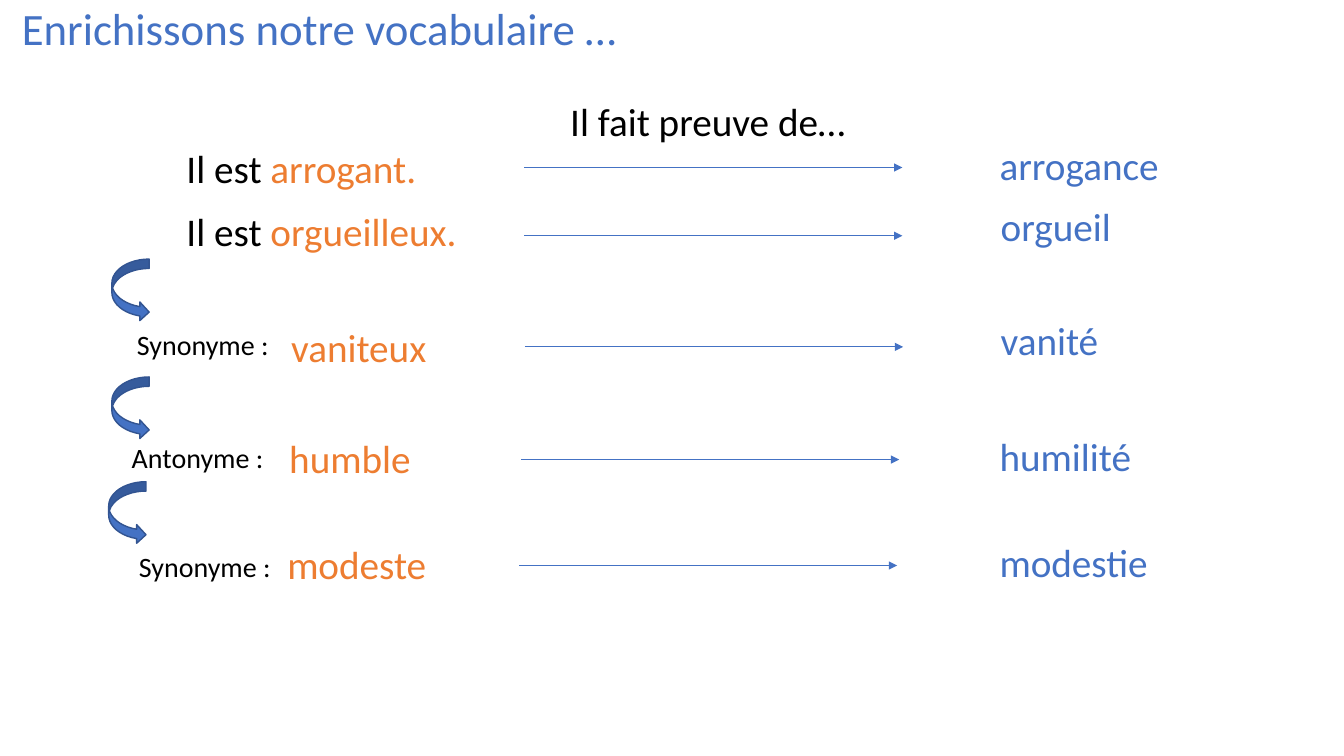
from lxml import etree
from pptx import Presentation
from pptx import util as u
from pptx.dml.color import RGBColor
from pptx.enum import shapes, text
from pptx.oxml import ns

BLUE, ORANGE, BLACK, EDGE = "4472C4", "ED7D31", "000000", "325491"
ROWS = [
    (3.43, "Il est ", "arrogant.", "arrogance", (4.45, 0.08), (13.21, 0.79), 24.94),
    (4.98, "Il est ", "orgueilleux.", "orgueil", (4.45, 0.13), (13.21, 0.96), 24.97),
    (7.85, "", "vaniteux", "vanité", (7.09, 0.18), (13.23, 0.89), 24.97),
    (10.77, "", "humble", "humilité", (7.04, 0.05), (13.13, 0.81), 24.94),
    (13.44, "", "modeste", "modestie", (6.99, 0.05), (13.08, 0.81), 24.94),
]
LINKS = [
    (2.82, 6.53, "Synonyme :", 0.38, 1.6),
    (2.82, 9.5, "Antonyme :", 0.25, 1.47),
    (2.74, 12.14, "Synonyme :", 0.51, 1.58),
]


def tint(code):
    return RGBColor.from_string(code)


def write(slide, box, size, *parts):
    frame = slide.shapes.add_textbox(*map(u.Cm, box)).text_frame
    frame.word_wrap = True
    frame.auto_size = text.MSO_AUTO_SIZE.SHAPE_TO_FIT_TEXT
    for words, code in parts:
        if words:
            run = frame.paragraphs[0].add_run()
            run.text = words
            run.font.name = "Calibri"
            run.font.size = u.Pt(size)
            run.font.color.rgb = tint(code)


def arrow(slide, left, top, width):
    line = slide.shapes.add_connector(
        shapes.MSO_CONNECTOR.STRAIGHT,
        u.Cm(left), u.Cm(top), u.Cm(left + width), u.Cm(top))
    line.line.color.rgb = tint(BLUE)
    line.line.width = u.Pt(0.5)
    etree.SubElement(line.line._get_or_add_ln(), ns.qn("a:tailEnd"), type="triangle")
    etree.SubElement(line._element.spPr, ns.qn("a:effectLst"))


def row(slide, top, lead, word, noun, start, line, right):
    left, drop = start
    width = 8.28 if lead else 4.22
    write(slide, (left, top + drop, width, 1.45), 28, (lead, BLACK), (word, ORANGE))
    arrow(slide, line[0], top + line[1], 9.53)
    write(slide, (right, top, 4.83, 1.45), 28, (noun, BLUE))


def link(slide, left, top, label, shift, drop):
    curve = slide.shapes.add_shape(
        shapes.MSO_SHAPE.CURVED_RIGHT_ARROW,
        u.Cm(left), u.Cm(top), u.Cm(0.94), u.Cm(1.57))
    curve.shadow.inherit = False
    curve.fill.solid()
    curve.fill.fore_color.rgb = tint(BLUE)
    curve.line.color.rgb = tint(EDGE)
    curve.line.width = u.Pt(1)
    write(slide, (left + shift, top + drop, 3.96, 1.12), 20, (label, BLACK))


def main():
    deck = Presentation()
    deck.slide_width, deck.slide_height = u.Cm(33.87), u.Cm(19.05)
    slide = deck.slides.add_slide(deck.slide_layouts[6])
    write(slide, (0.3, -0.1, 21.26, 1.63), 32, ("Enrichissons notre vocabulaire …", BLUE))
    write(slide, (14.12, 2.34, 7.95, 1.45), 28, ("Il fait preuve de…", BLACK))
    for item in ROWS:
        row(slide, *item)
    for item in LINKS:
        link(slide, *item)
    deck.save("out.pptx")


if __name__ == "__main__":
    main()
